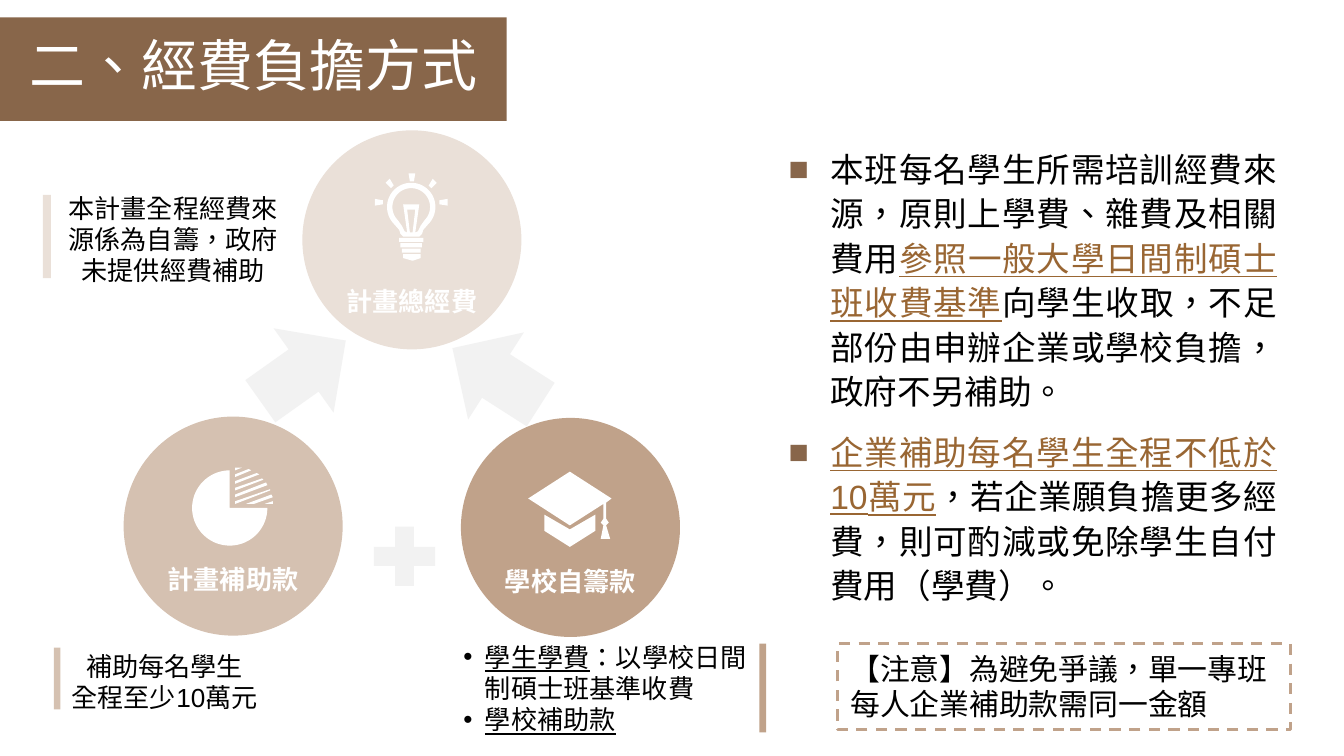
import math
from dataclasses import dataclass

from lxml import etree
from pptx import Presentation
from pptx.dml.color import RGBColor
from pptx.enum.dml import MSO_LINE
from pptx.enum.lang import MSO_LANGUAGE_ID
from pptx.enum.shapes import MSO_SHAPE
from pptx.enum.text import MSO_ANCHOR, MSO_AUTO_SIZE, PP_ALIGN
from pptx.oxml.ns import qn
from pptx.util import Inches, Pt

RECT, OVAL = MSO_SHAPE.RECTANGLE, MSO_SHAPE.OVAL
ARROW, PLUS = MSO_SHAPE.UP_ARROW, MSO_SHAPE.MATH_PLUS
LEFT, CENTER, JUSTIFY = PP_ALIGN.LEFT, PP_ALIGN.CENTER, PP_ALIGN.JUSTIFY
TOP, MIDDLE = MSO_ANCHOR.TOP, MSO_ANCHOR.MIDDLE
FIT, FIXED = MSO_AUTO_SIZE.SHAPE_TO_FIT_TEXT, MSO_AUTO_SIZE.NONE
CHINESE = MSO_LANGUAGE_ID.TRADITIONAL_CHINESE

BROWN, TAN, SAND, CREAM = "88664A", "C0A28A", "D5C1B1", "EAE0D8"
ACCENT, GREY, WHITE, BLACK = "996633", "F2F2F2", "FFFFFF", "000000"

Point = tuple[float, float]
Contour = list[Point]
Box = tuple[float, float, float, float]


@dataclass
class Run:
    text: str
    color: str = BLACK
    underline: bool = False


@dataclass
class Style:
    size: float = 14
    align: PP_ALIGN = LEFT
    bold: bool = False
    font: str = "Arial"
    bullet: str = ""
    bullet_color: str = BLACK
    indent: float = 0
    line_spacing: float | None = None
    space_before: float = 0


@dataclass
class Source:
    """A funding circle with its caption."""
    left: float
    top: float
    color: str
    caption: str
    caption_drop: float = 1.04


def rgb(color: str) -> RGBColor:
    return RGBColor.from_string(color)


def fill(sp, color: str) -> None:
    sp.shadow.inherit = False
    sp.fill.solid()
    sp.fill.fore_color.rgb = rgb(color)
    sp.line.fill.background()


def add_block(slide, kind: MSO_SHAPE, box: Box, color: str, rotation: float = 0):
    sp = slide.shapes.add_shape(kind, *map(Inches, box))
    fill(sp, color)
    sp.rotation = rotation
    return sp


def set_bullet(p, style: Style) -> None:
    pPr = p._p.get_or_add_pPr()
    pPr.set("marL", str(Inches(style.indent)))
    pPr.set("indent", str(-Inches(style.indent)))
    color = etree.SubElement(pPr, qn("a:buClr"))
    etree.SubElement(color, qn("a:srgbClr"), val=style.bullet_color)
    etree.SubElement(pPr, qn("a:buFont"), typeface="Arial")
    etree.SubElement(pPr, qn("a:buChar"), char=style.bullet)


def write(sp, paragraphs: list[list[Run]], style: Style,
          anchor: MSO_ANCHOR = TOP, auto_size: MSO_AUTO_SIZE = FIT) -> None:
    tf = sp.text_frame
    frame = {"word_wrap": True, "auto_size": auto_size, "vertical_anchor": anchor}
    for name, value in frame.items():
        setattr(tf, name, value)
    for i, runs in enumerate(paragraphs):
        p = tf.add_paragraph() if i else tf.paragraphs[0]
        layout = {"alignment": style.align, "line_spacing": style.line_spacing,
                  "space_before": Pt(style.space_before)}
        for name, value in layout.items():
            setattr(p, name, value)
        if style.bullet:
            set_bullet(p, style)
        for run in runs:
            r = p.add_run()
            r.text = run.text
            font = {"name": style.font, "size": Pt(style.size), "bold": style.bold,
                    "underline": run.underline, "language_id": CHINESE}
            for name, value in font.items():
                setattr(r.font, name, value)
            r.font.color.rgb = rgb(run.color)


def add_text(slide, box: Box, paragraphs: list[list[Run]], style: Style,
             anchor: MSO_ANCHOR = TOP, auto_size: MSO_AUTO_SIZE = FIT) -> None:
    write(slide.shapes.add_textbox(*map(Inches, box)), paragraphs, style, anchor, auto_size)


def arc(cx: float, cy: float, radius: float, start: int, end: int) -> Contour:
    """Points every 5 degrees, clockwise from the right."""
    return [(cx + radius * math.cos(math.radians(a)), cy + radius * math.sin(math.radians(a)))
            for a in range(start, end + 1, 5)]


def mirror(points: Contour, axis: float) -> Contour:
    return [(2 * axis - x, y) for x, y in reversed(points)]


def add_icon(slide, contours: list[Contour]) -> None:
    emu = [[(Inches(x), Inches(y)) for x, y in contour] for contour in contours]
    builder = slide.shapes.build_freeform(*emu[0][0])
    for i, contour in enumerate(emu):
        if i:
            builder.move_to(*contour[0])
        builder.add_line_segments(contour[1:], close=True)
    fill(builder.convert_to_shape(), WHITE)


def pie_icon() -> list[Contour]:
    x, base = 1.75, 3.75
    tips = [((1.85, 3.49), (1.87, 3.5)), ((1.91, 3.52), (1.93, 3.53)),
            ((1.95, 3.56), (1.96, 3.57)), ((1.98, 3.59), (1.99, 3.61)),
            ((2.01, 3.64), (2.01, 3.65))]
    stripes = [[*tip, (x, 3.55 + 0.05 * i), (x, 3.53 + 0.05 * i)] for i, tip in enumerate(tips)]
    return [[(1.71, 3.78), *arc(1.71, 3.78, 0.28, 0, 270)],
            [(x, 3.48), (1.8, 3.48), (x, 3.5)], *stripes,
            [(2.02, 3.68), (2.03, 3.7), (1.89, base), (1.83, base)],
            [(2.03, 3.73), (2.03, base), (1.97, base)]]


def bulb_icon() -> list[Contour]:
    cx = 3.06
    outer_neck = [(3, 1.76), (2.98, 1.74), (2.97, 1.71)]
    inner_neck = [(3.03, 1.73), (3.01, 1.72), (2.99, 1.68)]
    glass = [neck + arc(cx, 1.54, radius, 135, 405) + mirror(neck, cx)
             for neck, radius in ((outer_neck, 0.18), (inner_neck, 0.14))]
    halves = [[(3, 1.52), (3.03, 1.73)], [(3.03, 1.56), (3.05, 1.73)]]
    filament = [half + mirror(half, cx) for half in halves]
    rays = [[(2.79, 1.48), (2.85, 1.49), (2.85, 1.52), (2.79, 1.53)],
            [(2.9, 1.33), (2.93, 1.38), (2.91, 1.4), (2.87, 1.36)]]
    top_ray = [(3.04, 1.29), (3.09, 1.29), (3.08, 1.35), (3.05, 1.35)]
    screw = [[(cx - w, y), (cx + w, y), (cx + w, y + 0.03), (cx - w, y + 0.03)]
             for w, y in ((0.09, 1.77), (0.08, 1.81), (0.07, 1.85))]
    foot = [(3, 1.89), (3.13, 1.89), (3.13, 1.92), (3.07, 1.94), (3, 1.92)]
    return [*glass, *filament, *rays, *(mirror(ray, cx) for ray in rays), top_ray, *screw, foot]


def cap_icon() -> list[Contour]:
    body = [(4.05, 3.83), (4.24, 3.94), (4.43, 3.83), (4.43, 3.95), (4.24, 4.07), (4.05, 3.95)]
    board = [(4.24, 3.51), (4.55, 3.71), (4.51, 3.74), (4.51, 3.86), (4.53, 3.89), (4.51, 3.91),
             (4.54, 4.01), (4.47, 4.01), (4.49, 3.91), (4.47, 3.89), (4.49, 3.86), (4.49, 3.75),
             (4.24, 3.91), (3.93, 3.71)]
    return [body, board]


SOURCES = [Source(2.25, 0.97, CREAM, "計畫總經費", 1.1),
           Source(0.92, 3.1, SAND, "計畫補助款"),
           Source(3.43, 3.11, TAN, "學校自籌款")]
SIDE_BARS = [((0.32, 1.45, 0.06, 0.62), CREAM), ((0.4, 4.82, 0.05, 0.46), SAND),
             ((5.65, 4.79, 0.05, 0.66), TAN)]
NOTES = [((0.41, 1.38, 1.76, 0.81), ["本計畫全程經費來源係為自籌，政府未提供經費補助"]),
         ((0.32, 4.79, 1.81, 0.57), ["補助每名學生", "全程至少10萬元"])]
RULES = [[Run("本班每名學生所需培訓經費來源，原則上學費、雜費及相關費用"),
          Run("參照一般大學日間制碩士班收費基準", ACCENT, True),
          Run("向學生收取，不足部份由申辦企業或學校負擔，政府不另補助。")],
         [Run("企業補助每名學生全程不低於10萬元", ACCENT, True),
          Run("，若企業願負擔更多經費，則可酌減或免除學生自付費用（學費）。")]]
SCHOOL_FUNDS = [[Run("學生學費", underline=True), Run("：以學校日間制碩士班基準收費")],
                [Run("學校補助款", underline=True)]]


def main() -> None:
    prs = Presentation()
    prs.slide_width, prs.slide_height = Inches(10), Inches(10 * 9 / 16)
    slide = prs.slides.add_slide(prs.slide_layouts[6])

    title = add_block(slide, RECT, (0, 0.13, 3.77, 0.77), BROWN)
    for side in ("left", "top", "right", "bottom"):
        setattr(title.text_frame, f"margin_{side}", Inches(0.1))
    write(title, [[Run("二、經費負擔方式", WHITE)]], Style(30, CENTER), auto_size=FIXED)

    for s in SOURCES:
        add_block(slide, OVAL, (s.left, s.top, 1.63, 1.63), s.color)
        add_text(slide, (s.left + 0.2, s.top + s.caption_drop, 1.23, 0.34),
                 [[Run(s.caption, WHITE)]], Style(align=CENTER, bold=True), MIDDLE)
    for icon in (bulb_icon(), pie_icon(), cap_icon()):
        add_icon(slide, icon)
    add_block(slide, ARROW, (3.31, 2.41, 0.77, 0.78), GREY, 302.6)
    add_block(slide, ARROW, (1.87, 2.37, 0.77, 0.78), GREY, 54.6)
    add_block(slide, PLUS, (2.7, 3.84, 0.62, 0.6), GREY)

    for box, color in SIDE_BARS:
        add_block(slide, RECT, box, color)
    for box, lines in NOTES:
        add_text(slide, box, [[Run(line)] for line in lines], Style(align=CENTER))
    add_text(slide, (3.35, 4.72, 2.31, 0.81), SCHOOL_FUNDS, Style(bullet="•", indent=0.16))
    add_text(slide, (5.77, 1.03, 3.83, 1.42), RULES,
             Style(18, JUSTIFY, bullet="■", bullet_color=BROWN, indent=0.31,
                   line_spacing=1.1, space_before=9), auto_size=FIXED)

    notice = add_block(slide, RECT, (6.23, 4.79, 3.37, 0.64), WHITE)
    notice.fill.background()
    notice.line.color.rgb = rgb(TAN)
    notice.line.width = Pt(1.5)
    notice.line.dash_style = MSO_LINE.DASH
    write(notice, [[Run("【注意】為避免爭議，單一專班每人企業補助款需同一金額")]],
          Style(16, font="Noto Sans CJK SC"))

    prs.save("out.pptx")


if __name__ == "__main__":
    main()
